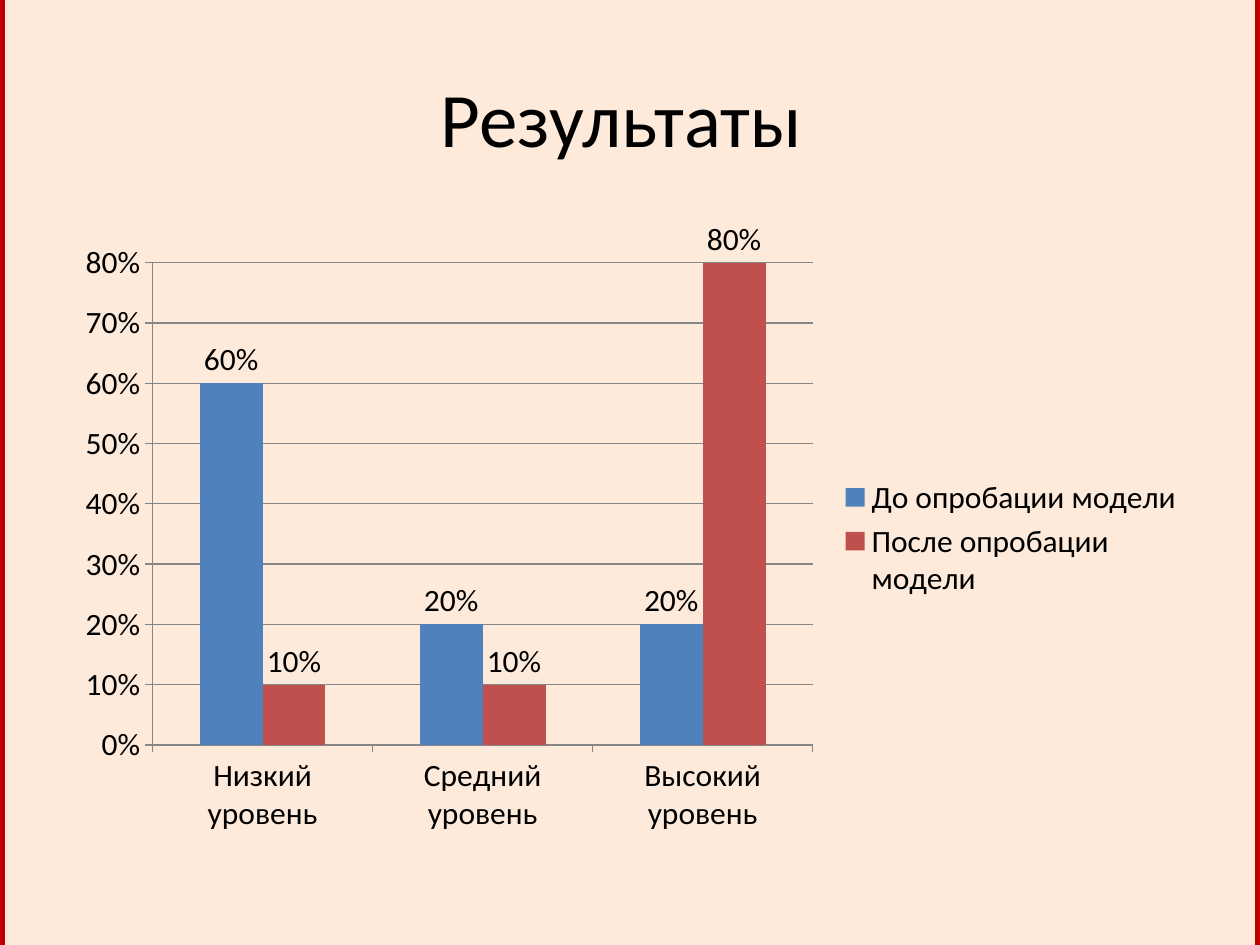
from dataclasses import dataclass

from pptx import Presentation
from pptx.chart.data import CategoryChartData
from pptx.dml.color import RGBColor
from pptx.enum.chart import XL_CHART_TYPE as ChartType
from pptx.enum.chart import XL_LABEL_POSITION as LabelPos
from pptx.enum.chart import XL_LEGEND_POSITION as LegendPos
from pptx.enum.chart import XL_TICK_MARK as Tick
from pptx.enum.shapes import MSO_SHAPE as Shape
from pptx.enum.text import MSO_ANCHOR as Anchor
from pptx.enum.text import PP_ALIGN as Align
from pptx.util import Pt


@dataclass(frozen=True)
class Theme:
    font: str = "Calibri"
    text: str = "000000"
    panel: str = "FDEADA"
    frame: str = "C00000"
    grid: str = "868686"
    title_size: int = 44
    chart_size: int = 18


THEME = Theme()
LEVELS = ["Низкий уровень", "Средний уровень", "Высокий уровень"]
RESULTS = [
    ("До опробации модели", [0.6, 0.2, 0.2], "4F81BD"),
    ("После опробации модели", [0.1, 0.1, 0.8], "C0504D"),
]


def rgb(color):
    return RGBColor.from_string(color)


def style_font(font, size):
    font.name = THEME.font
    font.size = Pt(size)
    font.color.rgb = rgb(THEME.text)


def write(shape, text, size, align=Align.CENTER, anchor=Anchor.MIDDLE):
    tf = shape.text_frame
    tf.word_wrap = True
    tf.vertical_anchor = anchor
    p = tf.paragraphs[0]
    p.alignment = align
    r = p.add_run()
    r.text = text
    style_font(r.font, size)


def add_panel(s, left, top, width, height):
    """Add the framed panel behind everything else."""
    sp = s.shapes.add_shape(Shape.RECTANGLE, Pt(left), Pt(top), Pt(width), Pt(height))
    sp.shadow.inherit = False
    sp.fill.solid()
    sp.fill.fore_color.rgb = rgb(THEME.panel)
    sp.line.color.rgb = rgb(THEME.frame)
    sp.line.width = Pt(6)
    s.shapes.element.insert(2, sp.element)


def place_title(s, text, left, top, width, height):
    title = s.shapes.title
    title.left, title.top = Pt(left), Pt(top)
    title.width, title.height = Pt(width), Pt(height)
    write(title, text, THEME.title_size)


def style_line(line):
    line.color.rgb = rgb(THEME.grid)
    line.width = Pt(0.75)


def style_axes(chart):
    for axis in (chart.category_axis, chart.value_axis):
        axis.major_tick_mark = Tick.OUTSIDE
        axis.minor_tick_mark = Tick.NONE
        style_line(axis.format.line)
    values = chart.value_axis
    values.minimum_scale, values.maximum_scale = 0, 0.8
    values.major_unit = 0.1
    values.has_major_gridlines = True
    style_line(values.major_gridlines.format.line)
    values.tick_labels.number_format = "0%"
    values.tick_labels.number_format_is_linked = False


def style_series(series, color):
    series.format.fill.solid()
    series.format.fill.fore_color.rgb = rgb(color)
    series.invert_if_negative = False
    labels = series.data_labels
    labels.show_value = True
    labels.number_format = "0%"
    labels.number_format_is_linked = False
    labels.position = LabelPos.OUTSIDE_END


def add_results_chart(s, left, top, width, height):
    data = CategoryChartData(number_format="0%")
    data.categories = LEVELS
    for name, values, _ in RESULTS:
        data.add_series(name, values)
    chart = s.shapes.add_chart(ChartType.COLUMN_CLUSTERED, Pt(left), Pt(top),
                               Pt(width), Pt(height), data).chart
    style_font(chart.font, THEME.chart_size)
    chart.has_title = False
    chart.has_legend = True
    chart.legend.position = LegendPos.RIGHT
    chart.legend.include_in_layout = False
    style_axes(chart)
    plot = chart.plots[0]
    plot.vary_by_categories = False
    plot.gap_width, plot.overlap = 150, 0
    for series, (_, _, color) in zip(plot.series, RESULTS):
        style_series(series, color)


def main():
    prs = Presentation()
    prs.slide_width, prs.slide_height = Pt(720), Pt(540)
    s = prs.slides.add_slide(prs.slide_layouts[5])
    add_panel(s, 0, -12, 720, 562)
    place_title(s, "Результаты ", 36, 21.6, 648, 90)
    add_results_chart(s, 36, 126, 648, 356.4)
    prs.save("out.pptx")


if __name__ == "__main__":
    main()
